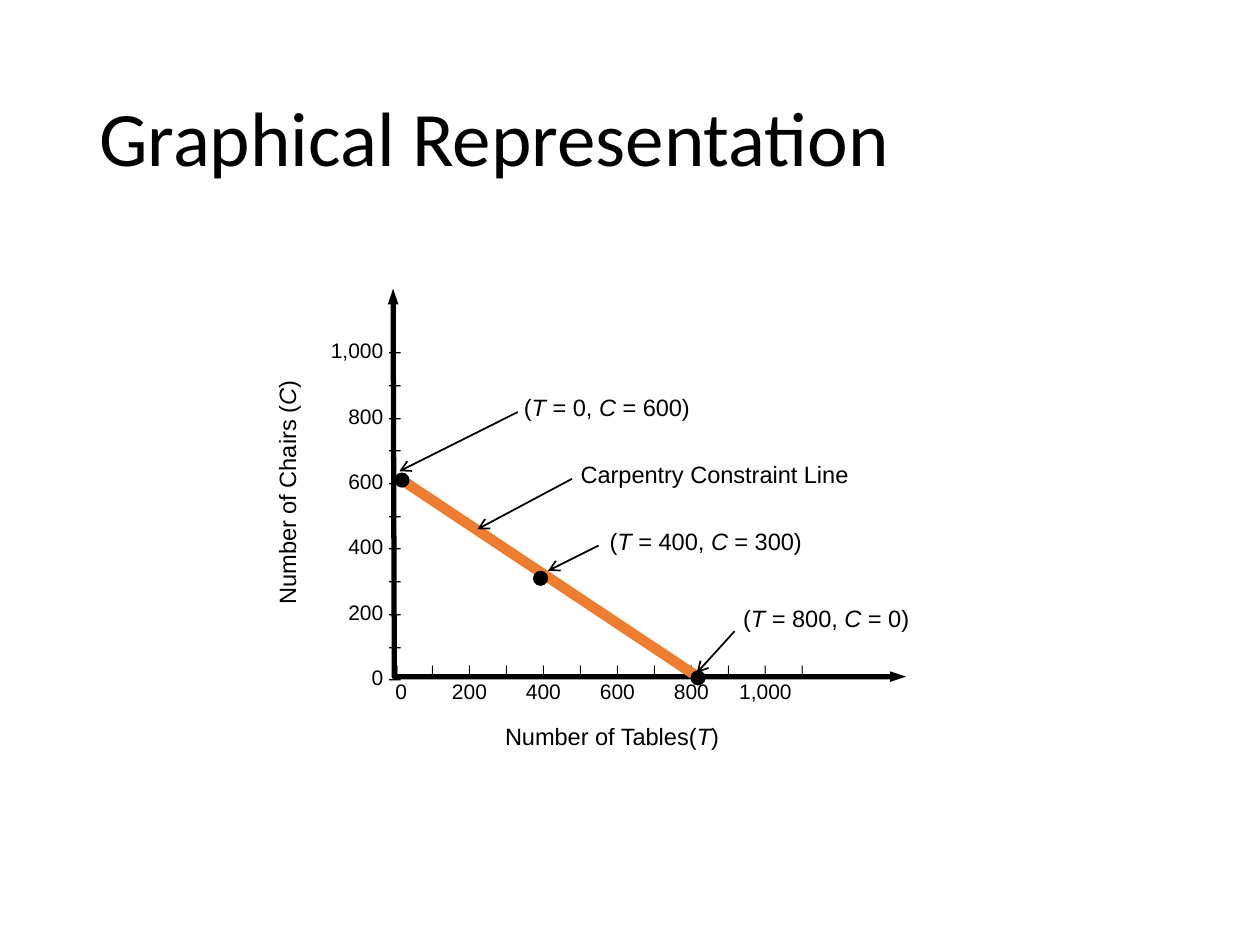
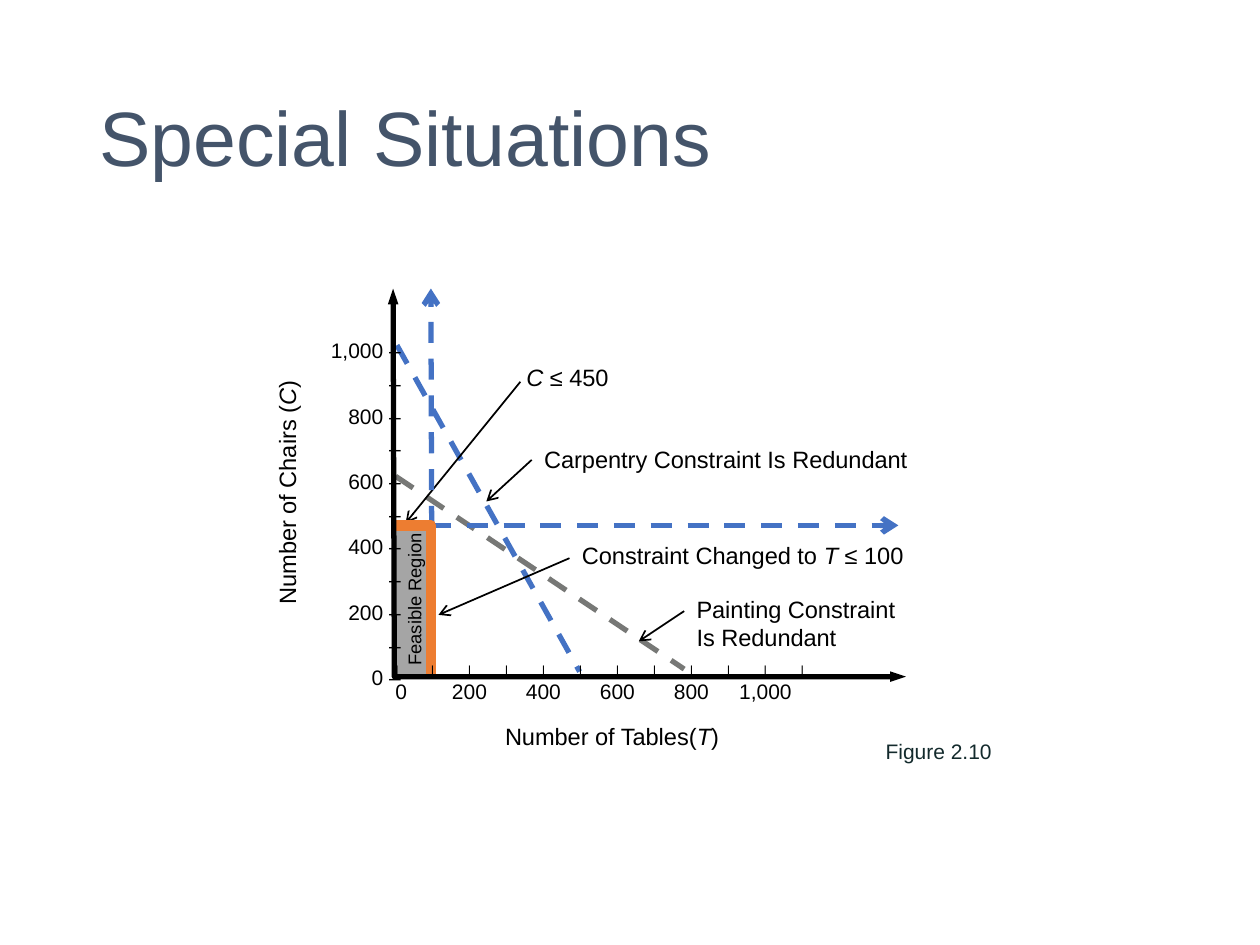
from lxml.etree import SubElement
from pptx import Presentation
from pptx.dml.color import RGBColor
from pptx.enum.dml import MSO_LINE
from pptx.enum.shapes import MSO_CONNECTOR, MSO_SHAPE
from pptx.enum.text import MSO_ANCHOR, MSO_AUTO_SIZE, PP_ALIGN
from pptx.oxml.ns import qn
from pptx.util import Inches, Pt

BLACK = "000000"
SLATE = "44546A"
TEAL = "132A2C"
ORANGE = "ED7D31"
BLUE = "4472C4"
DARK_GRAY = "777876"
GRAY = "A5A5A5"

LABEL_SIZE = 13.5
TICK_SIZE = 12
TICK_COUNT = 12
TICK_SPAN = 3.23
DOT_SIZE = 0.12


def rgb(value):
    return RGBColor.from_string(value)


def inches(*values):
    return [Inches(value) for value in values]


class GraphDeck:
    font = "Arial"

    def __init__(self):
        self.deck = Presentation()
        self.deck.slide_width, self.deck.slide_height = inches(10, 7.5)

    def page(self, title, font, color):
        self.shapes = self.deck.slides.add_slide(self.deck.slide_layouts[6]).shapes
        frame = self.box(0.69, 0.4, 8.62, 1.45, wrap=True).text_frame
        frame.auto_size = MSO_AUTO_SIZE.NONE
        frame.vertical_anchor = MSO_ANCHOR.MIDDLE
        para = self.add_spans(frame.paragraphs[0], title, 44, color, font)
        para.line_spacing = 0.9

    def box(self, left, top, width, height, wrap=False, rotation=0):
        box = self.shapes.add_textbox(*inches(left, top, width, height))
        box.rotation = rotation
        box.text_frame.word_wrap = wrap
        box.text_frame.auto_size = MSO_AUTO_SIZE.SHAPE_TO_FIT_TEXT
        return box

    def add_spans(self, para, text, size, color=BLACK, font=None):
        for index, part in enumerate(text.split("*")):
            if part:
                span = para.add_run()
                span.text = part
                span.font.name = font or self.font
                span.font.size = Pt(size)
                span.font.color.rgb = rgb(color)
                span.font.italic = index % 2 == 1
        return para

    def label(self, text, left, top, width, height=0.33, size=LABEL_SIZE,
              color=BLACK, wrap=False, rotation=0):
        box = self.box(left, top, width, height, wrap, rotation)
        self.add_spans(box.text_frame.paragraphs[0], text, size, color)

    def stroke(self, shape, color, width, dashed=False, **ends):
        shape.line.color.rgb = rgb(color)
        shape.line.width = Pt(width)
        if dashed:
            shape.line.dash_style = MSO_LINE.DASH
        outline = shape.element.spPr.find(qn("a:ln"))
        for end in ("headEnd", "tailEnd"):
            if end in ends:
                kind, breadth = ends[end]
                SubElement(outline, qn(f"a:{end}"), type=kind, w=breadth, len="med")

    def line(self, start, finish, color=BLACK, width=1, dashed=False, arrow=False):
        line = self.shapes.add_connector(
            MSO_CONNECTOR.STRAIGHT, *inches(*start, *finish))
        ends = {"tailEnd": ("arrow", "med")} if arrow else {}
        self.stroke(line, color, width, dashed, **ends)
        SubElement(line.element.spPr, qn("a:effectLst"))

    def callout(self, text, place, start, finish, **options):
        self.label(text, *place, **options)
        self.line(start, finish, arrow=True)

    def solid(self, kind, left, top, width, height, color):
        shape = self.shapes.add_shape(kind, *inches(left, top, width, height))
        shape.shadow.inherit = False
        shape.fill.solid()
        shape.fill.fore_color.rgb = rgb(color)
        shape.line.fill.background()

    def dot(self, left, top):
        self.solid(MSO_SHAPE.OVAL, left, top, DOT_SIZE, DOT_SIZE, BLACK)

    def outline(self, points, color, width, **ends):
        first, *rest = [inches(*point) for point in points]
        builder = self.shapes.build_freeform(*first)
        builder.add_line_segments(rest, close=False)
        shape = builder.convert_to_shape()
        shape.shadow.inherit = False
        shape.fill.background()
        self.stroke(shape, color, width, **ends)

    def axes(self):
        end = ("triangle", "sm")
        self.outline([(3.12, 2.29), (3.13, 5.37), (7.19, 5.37)],
                     BLACK, 3, headEnd=end, tailEnd=end)
        self.label("Number of Chairs (*C*)", 1.28, 3.73, 2, rotation=270)
        self.label("Number of Tables(*T*)", 3.91, 5.68, 1.92)
        self.chair_scale()
        self.table_scale()

    def chair_scale(self):
        frame = self.box(2.52, 2.57, 0.76, 2.99).text_frame
        for value in range(1000, -1, -100):
            para = frame.paragraphs[0] if value == 1000 else frame.add_paragraph()
            text = "–" if value % 200 else f"{value:,} –"
            self.add_spans(para, text, TICK_SIZE)
            para.alignment = PP_ALIGN.RIGHT
            para.line_spacing = 1.3

    def table_scale(self):
        frame = self.box(3.04, 5.21, 3.89, 0.43, wrap=True).text_frame
        ticks = "\t".join("|" * TICK_COUNT)
        numbers = "\t\t".join(f"{value:,}" for value in range(0, 1001, 200))
        self.add_spans(frame.paragraphs[0], ticks, 7.5)
        self.add_spans(frame.add_paragraph(), numbers, TICK_SIZE)
        gap = TICK_SPAN / (TICK_COUNT - 1)
        for para in frame.paragraphs:
            stops = SubElement(para._p.get_or_add_pPr(), qn("a:tabLst"))
            for step in range(1, TICK_COUNT):
                SubElement(stops, qn("a:tab"), pos=str(Inches(step * gap)), algn="ctr")


def graphical_representation(graph):
    graph.page("Graphical Representation", "Calibri", BLACK)
    graph.axes()
    graph.callout("(*T* = 0, *C* = 600)", (4.06, 3.07, 1.54), (4.11, 3.27), (3.17, 3.74))
    graph.line((3.19, 3.81), (5.55, 5.38), ORANGE, 6)
    for spot in [(3.13, 3.75), (5.48, 5.32), (4.23, 4.53)]:
        graph.dot(*spot)
    graph.callout("(*T* = 800, *C* = 0)", (5.8, 4.74, 1.54), (5.83, 5.01), (5.53, 5.34))
    graph.callout("Carpentry Constraint Line", (4.51, 3.6, 2.36), (4.54, 3.8), (3.79, 4.2))
    graph.callout("(*T* = 400, *C* = 300)", (4.74, 4.13, 1.75), (4.75, 4.33), (4.35, 4.53))


def special_situations(graph):
    graph.page("Special Situations", "Arial", SLATE)
    graph.line((3.14, 3.78), (5.43, 5.31), DARK_GRAY, 3, dashed=True)
    graph.line((3.15, 2.74), (4.6, 5.33), BLUE, 3, dashed=True)
    graph.callout("*C* ≤ 450", (4.08, 2.83, 0.86), (4.13, 3.03), (3.22, 4.15))
    graph.label("Figure 2.10", 6.93, 5.81, 1.05, 0.3, size=12, color=TEAL)
    graph.callout("Constraint Changed to *T* ≤ 100", (4.52, 4.24, 2.79),
                  (4.52, 4.43), (3.48, 4.88))
    for start, finish in [((3.43, 5.35), (3.42, 2.29)), ((3.12, 4.17), (7.13, 4.17))]:
        graph.line(start, finish, BLUE, 3, dashed=True, arrow=True)
    graph.callout("Carpentry Constraint Is Redundant", (4.22, 3.48, 3.11),
                  (4.22, 3.65), (3.86, 3.98), wrap=True)
    graph.callout("Painting Constraint Is Redundant", (5.43, 4.67, 1.9, 0.56),
                  (5.43, 4.85), (5.07, 5.09), wrap=True)
    graph.solid(MSO_SHAPE.RECTANGLE, 3.12, 4.17, 0.31, 1.21, GRAY)
    graph.label("Feasible Region", 2.66, 4.61, 1.26, 0.28, size=10.5,
                wrap=True, rotation=270)
    graph.outline([(3.12, 4.17), (3.42, 4.17), (3.42, 5.37)], ORANGE, 6)
    graph.axes()


def main():
    graph = GraphDeck()
    graphical_representation(graph)
    special_situations(graph)
    graph.deck.save("out.pptx")


if __name__ == "__main__":
    main()
